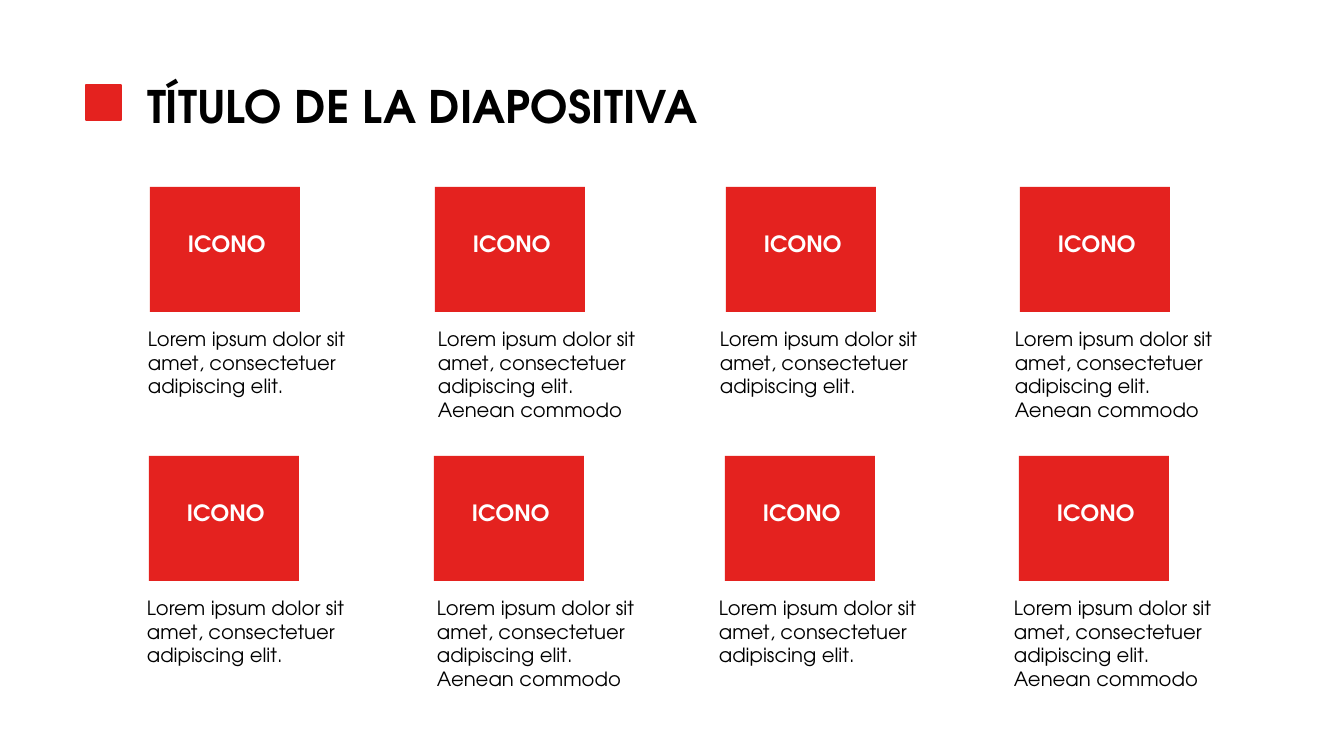
from pptx import Presentation
from pptx.dml.color import RGBColor
from pptx.enum.shapes import MSO_SHAPE
from pptx.enum.text import MSO_ANCHOR, MSO_AUTO_SIZE, PP_ALIGN
from pptx.util import Pt

TITLE = "TÍTULO DE LA DIAPOSITIVA"
LABEL = "ICONO"
SHORT = "Lorem ipsum dolor sit amet, consectetuer adipiscing elit."
LONG = SHORT + " Aenean commodo"
COLUMNS = [
    (150, 138, 219, 82, SHORT),
    (435, 428, 225, 105, LONG),
    (726, 710, 225, 82, SHORT),
    (1020, 1005, 225, 105, LONG),
]
ROWS = [(0, 187), (-1, 456)]
TILE_W, TILE_H = 150, 125
LABEL_DX, LABEL_DY, LABEL_W, LABEL_H = 28, 38, 104, 37
CAPTION_DY = 135

FONT = "TeX Gyre Adventor"
RED = RGBColor(0xE4, 0x22, 0x1F)
BLACK = RGBColor(0, 0, 0)
WHITE = RGBColor(255, 255, 255)
RECT = MSO_SHAPE.RECTANGLE
TOP = MSO_ANCHOR.TOP
LEFT = PP_ALIGN.LEFT
GROW = MSO_AUTO_SIZE.SHAPE_TO_FIT_TEXT
INCH = 914400
PX_PER_INCH = 100.8


def px(*lengths):
    return [round(n * INCH / PX_PER_INCH) for n in lengths]


def write(sp, text, size, color, bold=False):
    tf = sp.text_frame
    tf.word_wrap = True
    tf.auto_size = GROW
    tf.vertical_anchor = TOP
    p = tf.paragraphs[0]
    p.alignment = LEFT
    r = p.add_run()
    r.text = text
    r.font.name = FONT
    r.font.size = Pt(size)
    r.font.bold = bold
    r.font.color.rgb = color


def add_square(s, x, y, w, h, line=None):
    sp = s.shapes.add_shape(RECT, *px(x, y, w, h))
    sp.shadow.inherit = False
    sp.fill.solid()
    sp.fill.fore_color.rgb = RED
    if line:
        sp.line.color.rgb = RED
        sp.line.width = Pt(line)
    else:
        sp.line.fill.background()


def add_text(s, x, y, w, h, *style):
    write(s.shapes.add_textbox(*px(x, y, w, h)), *style)


def main():
    prs = Presentation()
    prs.slide_width, prs.slide_height = px(1344, 756)
    s = prs.slides.add_slide(prs.slide_layouts[5])

    title = s.shapes.title
    title.left, title.top, title.width, title.height = px(137, 74, 911, 65)
    write(title, TITLE, 32, BLACK, True)
    add_square(s, 86, 85, 35, 35, 1.5)

    for dx, y in ROWS:
        for tile_x, caption_x, caption_w, caption_h, caption in COLUMNS:
            x = tile_x + dx
            add_square(s, x, y, TILE_W, TILE_H)
            add_text(s, x + LABEL_DX, y + LABEL_DY, LABEL_W, LABEL_H,
                     LABEL, 16, WHITE, True)
            add_text(s, caption_x + dx, y + CAPTION_DY, caption_w, caption_h,
                     caption, 14, BLACK)

    prs.save("out.pptx")


if __name__ == "__main__":
    main()
